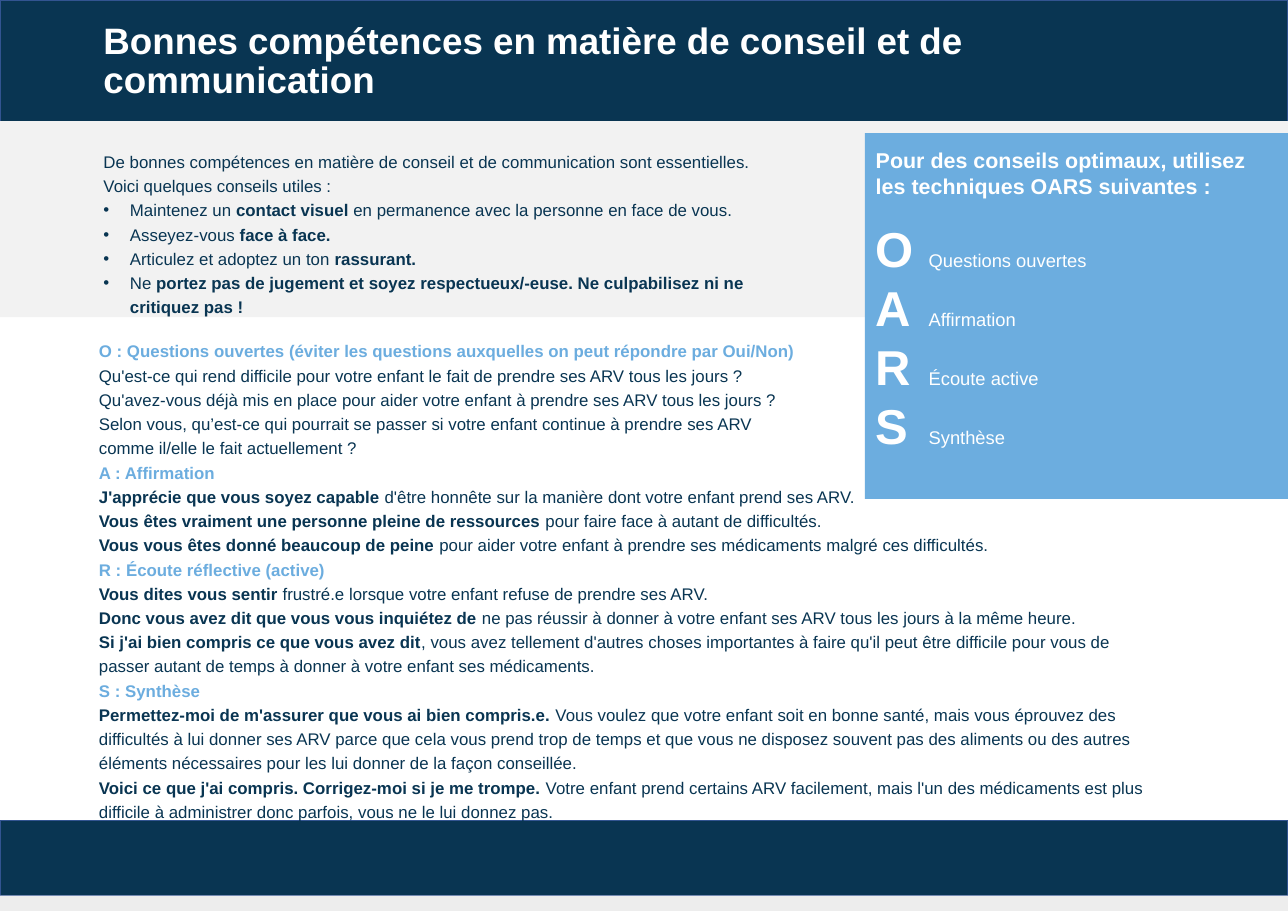
from dataclasses import dataclass

import lxml.etree
import pptx
import pptx.dml.color
import pptx.enum.shapes
import pptx.enum.text
import pptx.oxml.ns
import pptx.util

WIDTH, HEIGHT = 11.69, 8.27
NAVY, SKY, WHITE = "093552", "6CADDF", "FFFFFF"
BULLET_INDENT = 0.24
LETTER_TAB = 0.48


@dataclass(frozen=True)
class Area:
    """Left, top, width and height in percent of the slide."""
    left: float
    top: float
    width: float
    height: float

    def lengths(self) -> tuple:
        return tuple(
            pptx.util.Inches(share * side / 100)
            for share, side in (
                (self.left, WIDTH), (self.top, HEIGHT),
                (self.width, WIDTH), (self.height, HEIGHT),
            )
        )


@dataclass(frozen=True)
class Band:
    area: Area
    fill: str
    line: str = ""


@dataclass(frozen=True)
class Span:
    text: str
    bold: bool = False
    size: float = 0


@dataclass(frozen=True)
class Para:
    spans: tuple
    color: str = NAVY
    size: float = 11
    spacing: float = 1.2
    before: float = 0
    bullet: bool = False
    tab: float = 0


@dataclass(frozen=True)
class Box:
    area: Area
    paras: tuple
    middle: bool = False
    grow: bool = True


def plain(text: str) -> Para:
    return Para((Span(text),))


def heading(text: str) -> Para:
    return Para((Span(text, True),), SKY)


def example(lead: str, rest: str) -> Para:
    return Para((Span(lead, True), Span(rest)))


def tip(*spans: Span) -> Para:
    return Para(spans, bullet=True)


def technique(letter: str, name: str, before: float = 0) -> Para:
    return Para((Span(letter + "\t", True, 32), Span(name, size=12)),
                WHITE, 12, 1, before, tab=LETTER_TAB)


BANDS = (
    Band(Area(0, 0, 100, 13.66), NAVY, "325491"),
    Band(Area(0, 90.08, 100, 8.22), NAVY, "325491"),
    Band(Area(0, 13.3, 100, 21.52), "F2F2F2"),
    Band(Area(0, 98.31, 100, 1.69), "EDEDED"),
    Band(Area(67.15, 14.63, 32.85, 40.15), SKY),
)

TITLE = Box(Area(7.19, 0, 85.97, 13.66), (
    Para((Span("Bonnes compétences en matière de conseil et de communication", True),),
         WHITE, 24, 0.9),
), middle=True, grow=False)

ADVICE = Box(Area(7.19, 15.6, 53.64, 19.83), (
    plain("De bonnes compétences en matière de conseil et de communication sont essentielles."),
    plain("Voici quelques conseils utiles :"),
    tip(Span("Maintenez un "), Span("contact visuel", True),
        Span(" en permanence avec la personne en face de vous.")),
    tip(Span("Asseyez-vous "), Span("face à face.", True)),
    tip(Span("Articulez et adoptez un ton "), Span("rassurant.", True)),
    tip(Span("Ne "), Span("portez pas de jugement et soyez respectueux/-euse. "
                          "Ne culpabilisez ni ne critiquez pas !", True)),
))

EXAMPLES = Box(Area(6.84, 36.4, 83.75, 54.66), (
    heading("O : Questions ouvertes (éviter les questions auxquelles on peut répondre par Oui/Non)"),
    plain("Qu'est-ce qui rend difficile pour votre enfant le fait de prendre ses ARV tous les jours ?"),
    plain("Qu'avez-vous déjà mis en place pour aider votre enfant à prendre ses ARV tous les jours ?"),
    plain("Selon vous, qu’est-ce qui pourrait se passer si votre enfant continue à prendre ses ARV"),
    plain("comme il/elle le fait actuellement ?"),
    heading("A : Affirmation"),
    example("J'apprécie que vous soyez capable ",
            "d'être honnête sur la manière dont votre enfant prend ses ARV."),
    example("Vous êtes vraiment une personne pleine de ressources",
            " pour faire face à autant de difficultés."),
    example("Vous vous êtes donné beaucoup de peine ",
            "pour aider votre enfant à prendre ses médicaments malgré ces difficultés."),
    heading("R : Écoute réflective (active)"),
    example("Vous dites vous sentir ",
            "frustré.e lorsque votre enfant refuse de prendre ses ARV."),
    example("Donc vous avez dit que vous vous inquiétez de ",
            "ne pas réussir à donner à votre enfant ses ARV tous les jours à la même heure."),
    example("Si j'ai bien compris ce que vous avez dit",
            ", vous avez tellement d'autres choses importantes à faire qu'il peut être difficile "
            "pour vous de passer autant de temps à donner à votre enfant ses médicaments."),
    heading("S : Synthèse"),
    example("Permettez-moi de m'assurer que vous ai bien compris.e. ",
            "Vous voulez que votre enfant soit en bonne santé, mais vous éprouvez des difficultés "
            "à lui donner ses ARV parce que cela vous prend trop de temps et que vous ne disposez "
            "souvent pas des aliments ou des autres éléments nécessaires pour les lui donner "
            "de la façon conseillée."),
    example("Voici ce que j'ai compris. Corrigez-moi si je me trompe. ",
            "Votre enfant prend certains ARV facilement, mais l'un des médicaments est plus "
            "difficile à administrer donc parfois, vous ne le lui donnez pas."),
))

TECHNIQUES = Box(Area(67.15, 15.11, 31.99, 35.79), (
    Para((Span("Pour des conseils optimaux, utilisez les techniques OARS suivantes :", True),),
         WHITE, 14, 1),
    technique("O", "Questions ouvertes", before=13),
    technique("A", "Affirmation"),
    technique("R", "Écoute active"),
    technique("S", "Synthèse"),
), middle=True)


def rgb(color: str) -> pptx.dml.color.RGBColor:
    return pptx.dml.color.RGBColor.from_string(color)


def draw_band(page, band: Band) -> None:
    shape = page.shapes.add_shape(
        pptx.enum.shapes.MSO_SHAPE.RECTANGLE, *band.area.lengths())
    shape.shadow.inherit = False
    shape.fill.solid()
    shape.fill.fore_color.rgb = rgb(band.fill)
    if band.line:
        shape.line.color.rgb = rgb(band.line)
        shape.line.width = pptx.util.Pt(1)
    else:
        shape.line.fill.background()


def write_para(paragraph, para: Para) -> None:
    paragraph.line_spacing = para.spacing
    if para.before:
        paragraph.space_before = pptx.util.Pt(para.before)
    properties = paragraph._p.get_or_add_pPr()
    qn = pptx.oxml.ns.qn
    if para.bullet:
        indent = pptx.util.Inches(BULLET_INDENT)
        properties.set("marL", str(indent))
        properties.set("indent", str(-indent))
        lxml.etree.SubElement(properties, qn("a:buFont"), typeface="Arial")
        lxml.etree.SubElement(properties, qn("a:buChar"), char="•")
    if para.tab:
        tabs = lxml.etree.SubElement(properties, qn("a:tabLst"))
        lxml.etree.SubElement(tabs, qn("a:tab"),
                              pos=str(pptx.util.Inches(para.tab)), algn="l")
    paragraph.font.name = "Arial"
    paragraph.font.size = pptx.util.Pt(para.size)
    paragraph.font.color.rgb = rgb(para.color)
    bolds = {span.bold for span in para.spans}
    if len(bolds) == 1:
        paragraph.font.bold = bolds.pop()
    for span in para.spans:
        run = paragraph.add_run()
        run.text = span.text
        if bolds:
            run.font.bold = span.bold
        if span.size:
            run.font.size = pptx.util.Pt(span.size)


def draw_box(page, box: Box) -> None:
    frame = page.shapes.add_textbox(*box.area.lengths()).text_frame
    frame.word_wrap = True
    if box.grow:
        frame.auto_size = pptx.enum.text.MSO_AUTO_SIZE.SHAPE_TO_FIT_TEXT
    if box.middle:
        frame.vertical_anchor = pptx.enum.text.MSO_ANCHOR.MIDDLE
    for index, para in enumerate(box.paras):
        write_para(frame.add_paragraph() if index else frame.paragraphs[0], para)


def main() -> None:
    deck = pptx.Presentation()
    deck.slide_width = pptx.util.Inches(WIDTH)
    deck.slide_height = pptx.util.Inches(HEIGHT)
    page = deck.slides.add_slide(deck.slide_layouts[6])
    for band in BANDS:
        draw_band(page, band)
    for box in (TITLE, ADVICE, EXAMPLES, TECHNIQUES):
        draw_box(page, box)
    deck.save("out.pptx")


if __name__ == "__main__":
    main()
